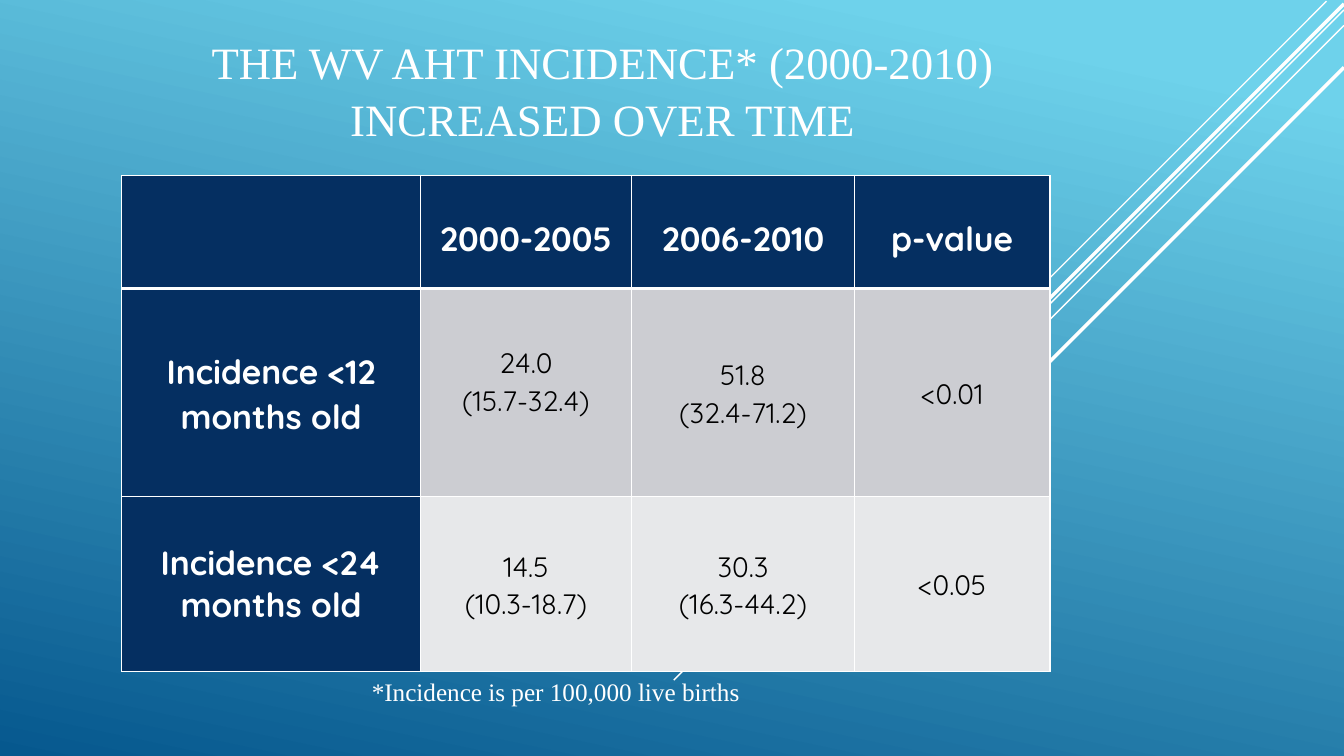
from dataclasses import dataclass

from lxml.etree import SubElement
from pptx import Presentation
from pptx.dml.color import RGBColor
from pptx.enum.shapes import MSO_CONNECTOR
from pptx.enum.text import MSO_ANCHOR, PP_ALIGN
from pptx.oxml.ns import qn
from pptx.slide import Slide
from pptx.table import _Cell
from pptx.text.text import _Paragraph
from pptx.util import Cm, Pt

WHITE = RGBColor(0xFF, 0xFF, 0xFF)
BLACK = RGBColor(0x00, 0x00, 0x00)
NAVY = RGBColor(0x05, 0x2F, 0x61)
GREY = RGBColor(0xCC, 0xCD, 0xD2)
PALE = RGBColor(0xE7, 0xE8, 0xEA)
SKY = RGBColor(0x6E, 0xD2, 0xEB)
DEEP = RGBColor(0x06, 0x58, 0x8E)

SERIF = "Times New Roman"
SANS = "Quicksand"


@dataclass
class Ray:
    """A diagonal line falling to the left at 45 degrees, in centimetres."""
    x: float
    y: float
    run: float
    width: float


@dataclass
class Entry:
    lines: list[str]
    fill: RGBColor
    head: bool = False
    spacing: float = 1.07
    anchor: MSO_ANCHOR = MSO_ANCHOR.MIDDLE
    bottom: float = 0


RAYS = [
    Ray(33.43, 0.03, 10.58, 1),
    Ray(33.87, 0.25, 16.89, 1),
    Ray(33.87, 0.64, 13.77, 1),
    Ray(33.87, 0.1, 13.48, 2.5),
    Ray(33.87, 1.7, 12.07, 2.5),
]

COLS = [7.52, 5.33, 5.61, 4.93]
ROWS = [2.85, 5.25, 4.4]
HEADS = ["", "2000-2005", "2006-2010", "p-value"]
GRID = [
    [Entry([text], NAVY, True, 2, MSO_ANCHOR.TOP) for text in HEADS],
    [
        Entry(["Incidence <12 months old"], NAVY, True),
        Entry(["24.0", "(15.7-32.4)"], GREY, bottom=0.6),
        Entry(["51.8", "(32.4-71.2)"], GREY),
        Entry(["<0.01"], GREY),
    ],
    [
        Entry(["Incidence <24 months old"], NAVY, True, 1),
        Entry(["14.5", "(10.3-18.7)"], PALE),
        Entry(["30.3", "(16.3-44.2)"], PALE),
        Entry(["<0.05"], PALE),
    ],
]


def style(par: _Paragraph, face: str, size: float, color: RGBColor,
          bold: bool = False) -> None:
    par.font.name = face
    par.font.size = Pt(size)
    par.font.color.rgb = color
    par.font.bold = bold


def paint_back(slide: Slide) -> None:
    fill = slide.background.fill
    fill.gradient()
    fill.gradient_angle = 258
    for stop, place, color in zip(fill.gradient_stops, (0.1, 1), (SKY, DEEP)):
        stop.position = place
        stop.color.rgb = color


def draw_ray(slide: Slide, ray: Ray) -> None:
    line = slide.shapes.add_connector(
        MSO_CONNECTOR.STRAIGHT, Cm(ray.x), Cm(ray.y),
        Cm(ray.x - ray.run), Cm(ray.y + ray.run))
    line.line.color.rgb = WHITE
    line.line.width = Pt(ray.width)
    SubElement(line._element.spPr, qn("a:effectLst"))


def add_text(slide: Slide, box: tuple[float, float, float, float],
             text: str, size: float) -> _Paragraph:
    frame = slide.shapes.add_textbox(*map(Cm, box)).text_frame
    frame.word_wrap = True
    par = frame.paragraphs[0]
    par.text = text
    style(par, SERIF, size, WHITE)
    return par


def set_edge(cell: _Cell, side: str, width: float) -> None:
    props = cell._tc.get_or_add_tcPr()
    edge = SubElement(props, qn(f"a:ln{side}"), w=str(Pt(width)))
    fill = SubElement(edge, qn("a:solidFill"))
    SubElement(fill, qn("a:srgbClr"), val=str(WHITE))


def fill_cell(cell: _Cell, entry: Entry, row: int) -> None:
    for side in "LRTB":
        thick = (row, side) in ((0, "B"), (1, "T"))
        set_edge(cell, side, 3 if thick else 1)
    cell.fill.solid()
    cell.fill.fore_color.rgb = entry.fill
    cell.margin_left = cell.margin_right = Cm(0.18)
    cell.margin_top = 0
    cell.margin_bottom = Cm(entry.bottom)
    cell.vertical_anchor = entry.anchor
    cell.text = "\n".join(entry.lines)
    for par in cell.text_frame.paragraphs:
        par.alignment = PP_ALIGN.CENTER
        par.line_spacing = entry.spacing
        if entry.head:
            style(par, SANS, 24, WHITE, True)
        else:
            style(par, SANS, 20, BLACK)


def draw_table(slide: Slide) -> None:
    table = slide.shapes.add_table(
        len(ROWS), len(COLS), Cm(3.07), Cm(4.42),
        Cm(sum(COLS)), Cm(sum(ROWS))).table
    for col, width in zip(table.columns, COLS):
        col.width = Cm(width)
    for row, height in zip(table.rows, ROWS):
        row.height = Cm(height)
    for r, line in enumerate(GRID):
        for c, entry in enumerate(line):
            fill_cell(table.cell(r, c), entry, r)


def main() -> None:
    deck = Presentation()
    deck.slide_width, deck.slide_height = Cm(33.87), Cm(19.05)
    slide = deck.slides.add_slide(deck.slide_layouts[6])
    paint_back(slide)
    for ray in RAYS:
        draw_ray(slide, ray)

    title = add_text(slide, (0.61, 1.09, 29.16, 2.69),
                     "THE WV AHT INCIDENCE* (2000-2010)\vINCREASED OVER TIME", 32)
    title.alignment = PP_ALIGN.CENTER
    title.line_spacing = 1.05
    slide.shapes[-1].text_frame.vertical_anchor = MSO_ANCHOR.BOTTOM

    draw_table(slide)
    add_text(slide, (9.12, 16.92, 18.82, 1.02),
             "*Incidence is per 100,000 live births", 18)
    deck.save("out.pptx")


if __name__ == "__main__":
    main()
